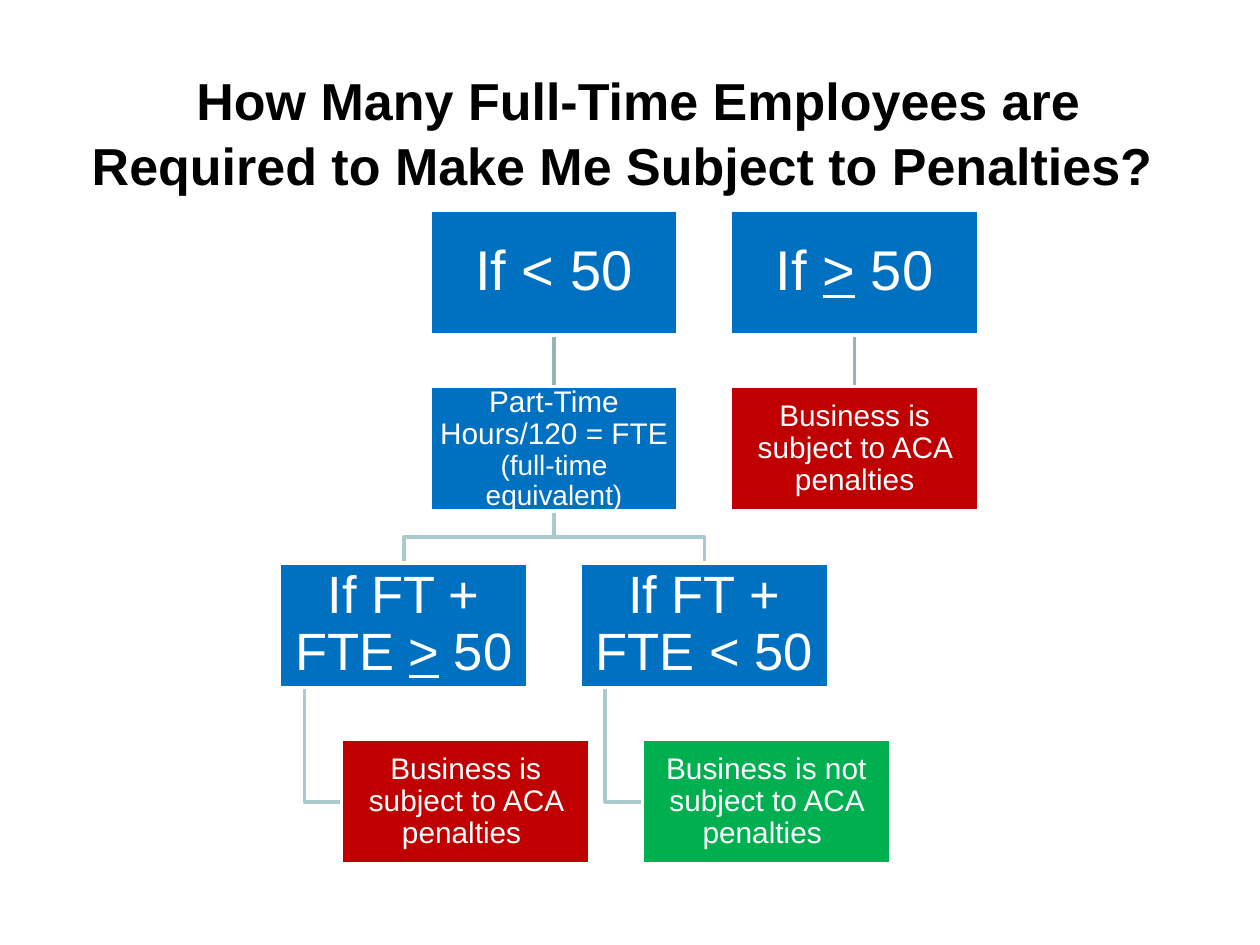
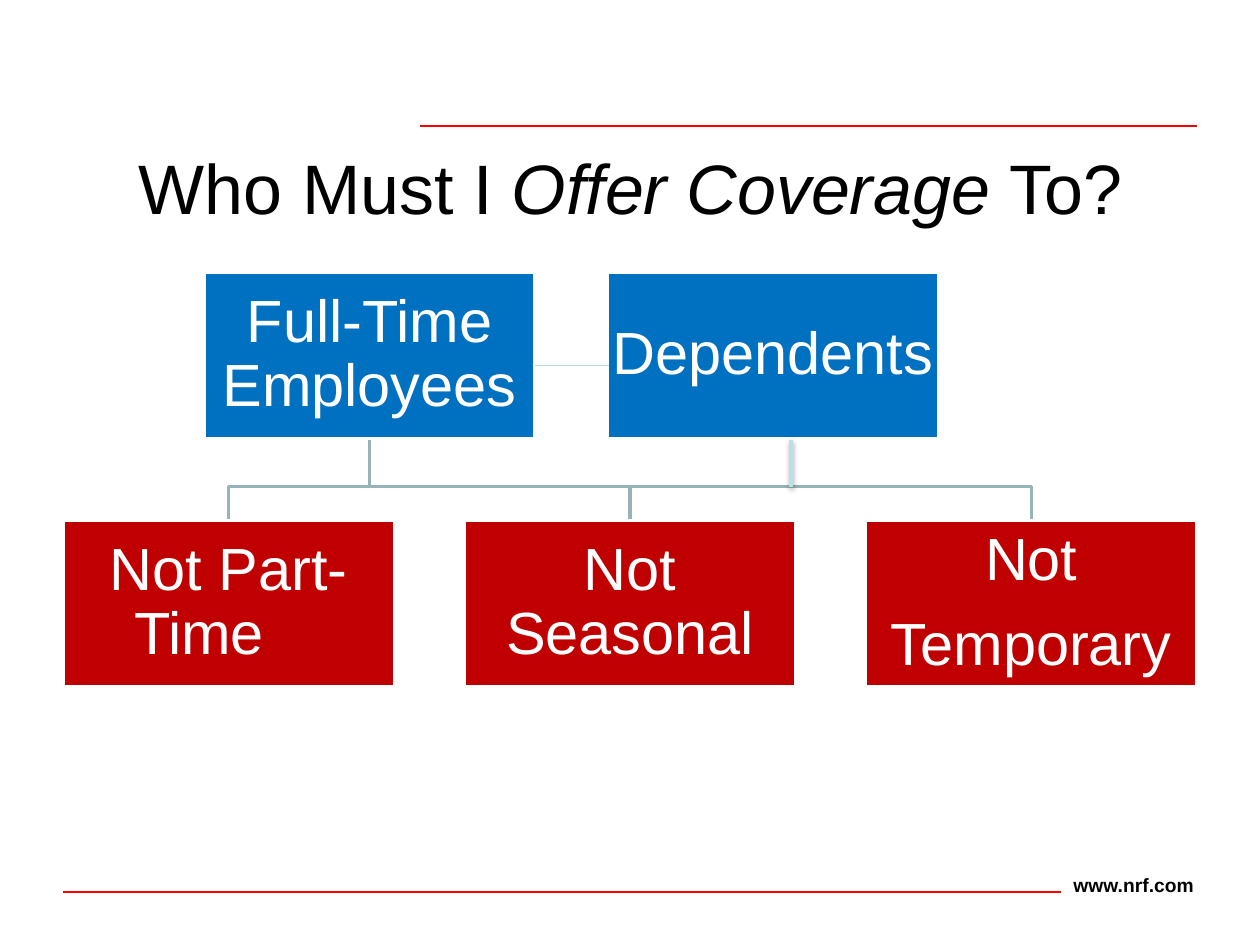
from lxml.etree import SubElement
from pptx import Presentation
from pptx.dml.color import RGBColor
from pptx.enum.shapes import MSO_CONNECTOR, MSO_SHAPE
from pptx.enum.text import MSO_ANCHOR, MSO_AUTO_SIZE, PP_ALIGN
from pptx.oxml.ns import qn
from pptx.util import Cm, Pt

BLUE = RGBColor(0x00, 0x70, 0xC0)
RED = RGBColor(0xC0, 0x00, 0x00)
GREEN = RGBColor(0x00, 0xB0, 0x50)
WHITE = RGBColor(0xFF, 0xFF, 0xFF)
BLACK = RGBColor(0x00, 0x00, 0x00)
RULE = RGBColor(0xFF, 0x00, 0x00)
DARK = RGBColor(0x96, 0xB3, 0xB6)
PALE = RGBColor(0xAA, 0xCB, 0xCE)
AQUA = RGBColor(0xBB, 0xE0, 0xE3)
MIST = RGBColor(0xB6, 0xDC, 0xDF)
FONT = "Arial"


def write(para, parts, size, color, bold=False):
    for text, style in parts:
        run = para.add_run()
        run.text = text
        for name, value in style.items():
            setattr(run.font, name, value)
    font = para.font
    font.name, font.size, font.bold = FONT, Pt(size), bold
    font.color.rgb = color


def add_title(slide, box, parts, size, bold=False, inset=0.13):
    title = slide.shapes.title
    title.left, title.top, title.width, title.height = map(Cm, box)
    frame = title.text_frame
    frame.auto_size = MSO_AUTO_SIZE.NONE
    frame.word_wrap = True
    frame.vertical_anchor = MSO_ANCHOR.MIDDLE
    frame.margin_top = Cm(inset)
    para = frame.paragraphs[0]
    para.alignment = PP_ALIGN.CENTER
    write(para, parts, size, BLACK, bold)


def add_line(slide, start, end, color, width):
    line = slide.shapes.add_connector(
        MSO_CONNECTOR.STRAIGHT, *map(Cm, start + end))
    line.line.color.rgb = color
    line.line.width = Pt(width)
    return SubElement(line._element.spPr, qn("a:effectLst"))


def add_glow(effects):
    glow = SubElement(effects, qn("a:outerShdw"), blurRad="39370",
                      dist="20320", dir="5400000", rotWithShape="0")
    tint = SubElement(glow, qn("a:srgbClr"), val="000000")
    SubElement(tint, qn("a:alpha"), val="38000")


def add_wire(slide, points, color):
    spots = [(Cm(x), Cm(y)) for x, y in points]
    form = slide.shapes.build_freeform(*spots[0])
    form.add_line_segments(spots[1:], close=False)
    wire = form.convert_to_shape()
    wire.shadow.inherit = False
    wire.fill.background()
    wire.line.color.rgb = color
    wire.line.width = Pt(2)


def add_fork(slide, start, bend, ends, color):
    x, y = start
    for right, low in ends:
        add_wire(slide, [(x, y), (x, bend), (right, bend), (right, low)], color)


def add_card(slide, box, fill, size, paras):
    card = slide.shapes.add_shape(MSO_SHAPE.RECTANGLE, *map(Cm, box))
    card.shadow.inherit = False
    card.fill.solid()
    card.fill.fore_color.rgb = fill
    card.line.color.rgb = WHITE
    card.line.width = Pt(2)
    frame = card.text_frame
    frame.word_wrap = True
    frame.vertical_anchor = MSO_ANCHOR.MIDDLE
    inset = Cm(0.03 if size < 20 else 0.05)
    frame.margin_left = frame.margin_right = inset
    frame.margin_top = frame.margin_bottom = inset
    for i, parts in enumerate(paras):
        para = frame.add_paragraph() if i else frame.paragraphs[0]
        para.alignment = PP_ALIGN.CENTER
        para.line_spacing = 0.9
        if i < len(paras) - 1:
            para.space_after = Pt(size * 0.35)
        write(para, parts, size, WHITE)


def add_frame(slide):
    add_line(slide, (8.46, 2.54), (24.13, 2.54), RULE, 1)
    add_line(slide, (1.27, 17.98), (21.39, 17.98), RULE, 1)
    site = slide.shapes.add_textbox(Cm(21.39), Cm(17.48), Cm(3.18), Cm(0.71))
    site.text_frame.word_wrap = True
    write(site.text_frame.paragraphs[0], [("www.nrf.com", {})], 11, BLACK, True)


def add_tree(slide, left, top):
    wide, high, step, drop = 5, 2.51, 3.03, 3.556

    def spot(col, row):
        return left + col * step, top + row * drop

    def foot(col, row):
        x, y = spot(col, row)
        return x + wide / 2, y + high

    def head(col, row):
        x, y = spot(col, row)
        return x + wide / 2, y

    for col in (1, 3):
        add_line(slide, foot(col, 0), head(col, 1), DARK, 2)
    start = foot(1, 1)
    bend = start[1] + (drop - high) / 2
    add_fork(slide, start, bend, [head(0, 2), head(2, 2)], PALE)
    shift = wide / 4
    for col in (0, 2):
        x, y = spot(col, 2)
        stem = x + wide / 10
        mid = y + drop + high / 2
        add_wire(slide, [(stem, y + high), (stem, mid), (x + shift, mid)], PALE)

    over = (">", {"underline": True})
    cards = [
        (1, 0, 0, BLUE, 32, [("If < 50", {})]),
        (1, 1, 0, BLUE, 17, [("Part-Time Hours/120 = FTE ", {}),
                             ("(full-time equivalent)", {"size": Pt(16)})]),
        (0, 2, 0, BLUE, 30, [("If FT + FTE ", {}), over, (" 50", {})]),
        (0, 3, shift, RED, 17, [("Business is subject to ACA penalties ", {})]),
        (2, 2, 0, BLUE, 30, [("If FT + FTE < 50", {})]),
        (2, 3, shift, GREEN, 17,
         [("Business is not subject to ACA penalties ", {})]),
        (3, 0, 0, BLUE, 32, [("If ", {}), over, (" 50", {})]),
        (3, 1, 0, RED, 17, [("Business is subject to ACA penalties", {})]),
    ]
    for col, row, dx, fill, size, parts in cards:
        x, y = spot(col, row)
        add_card(slide, (x + dx, y, wide, high), fill, size, [parts])


def add_groups(slide, left, top):
    wide, high, step, drop = 6.68, 3.35, 8.09, 5
    low = top + drop
    bend = top + 4.32
    lefts = [left + i * step for i in range(3)]
    first, second = left + 2.84, left + 10.97
    ends = [(x + wide / 2, low) for x in reversed(lefts)]
    add_fork(slide, (first + wide / 2, top + high), bend, ends, DARK)
    cards = [
        (first, top, BLUE, ["Full-Time Employees"]),
        (lefts[0], low, RED, ["Not Part-Time\t"]),
        (lefts[1], low, RED, ["Not Seasonal"]),
        (lefts[2], low, RED, ["Not", "Temporary"]),
        (second, top, BLUE, ["Dependents"]),
    ]
    for x, y, fill, texts in cards:
        paras = [[(text, {})] for text in texts]
        add_card(slide, (x, y, wide, high), fill, 34, paras)
    stem = left + 14.68
    add_glow(add_line(slide, (stem, top + 3.38), (stem, bend), AQUA, 2))
    level = top + 1.88
    add_line(slide, (first + wide, level), (second + 0.03, level), MIST, 0.75)


def build_count(slide):
    add_title(slide, (1.27, 0.84, 22.86, 3.18),
              [(" ", {"size": Pt(36)}),
               ("How Many Full-Time Employees are Required to Make Me "
                "Subject to Penalties? ", {})], 29.7, True, 0.38)
    add_tree(slide, 5.64, 4.24)


def build_cover(slide):
    add_frame(slide)
    add_title(slide, (0.43, 2.97, 24.56, 1.57),
              [("Who Must I ", {}), ("Offer Coverage ", {"italic": True}),
               ("To?", {})], 40)
    add_groups(slide, 1.27, 5.49)


def main():
    deck = Presentation()
    deck.slide_width, deck.slide_height = Cm(25.4), Cm(19.05)
    for build in (build_count, build_cover):
        build(deck.slides.add_slide(deck.slide_layouts[5]))
    deck.save("out.pptx")


if __name__ == "__main__":
    main()
